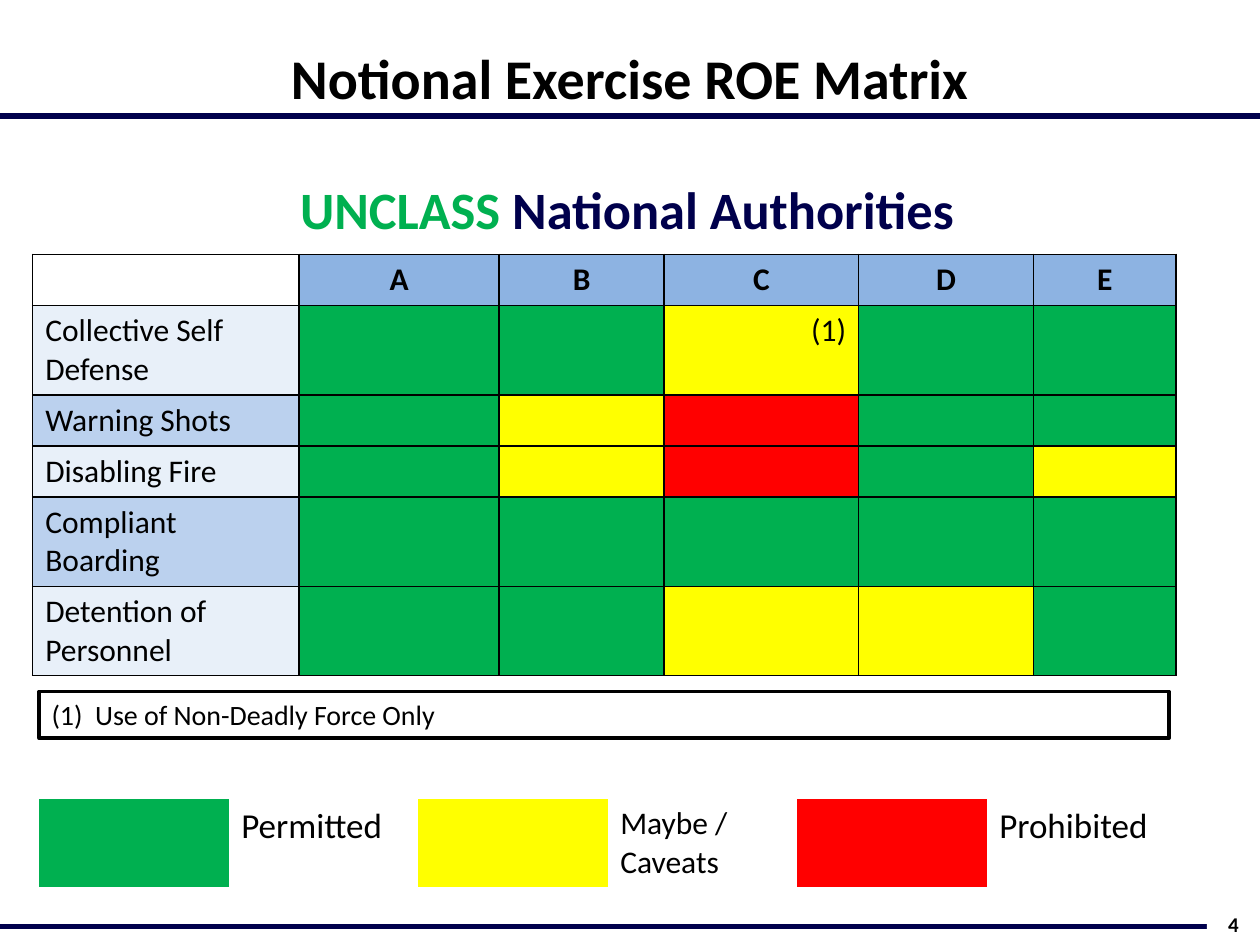
from lxml import etree
from pptx import Presentation
from pptx.dml.color import RGBColor
from pptx.enum.shapes import MSO_CONNECTOR, MSO_SHAPE
from pptx.enum.text import MSO_ANCHOR, PP_ALIGN
from pptx.oxml.ns import qn
from pptx.util import Cm, Pt

LEFT, MID, RIGHT = PP_ALIGN.LEFT, PP_ALIGN.CENTER, PP_ALIGN.RIGHT
TOP, CENTER, LOW = MSO_ANCHOR.TOP, MSO_ANCHOR.MIDDLE, MSO_ANCHOR.BOTTOM
BLACK = RGBColor(0x00, 0x00, 0x00)
WHITE = RGBColor(0xFF, 0xFF, 0xFF)
NAVY = RGBColor(0x00, 0x00, 0x4C)
GREEN = RGBColor(0x00, 0xB0, 0x50)
YELLOW = RGBColor(0xFF, 0xFF, 0x00)
RED = RGBColor(0xFF, 0x00, 0x00)
HEAD = RGBColor(0x8D, 0xB3, 0xE2)
BANDS = RGBColor(0xE8, 0xF0, 0xF9), RGBColor(0xBB, 0xD1, 0xEE)
STATES = {"G": GREEN, "Y": YELLOW, "R": RED}

TITLE = "Notional Exercise ROE Matrix"
NATIONS = "ABCDE"
RULES = [  # action, state for each nation, row height in cm
    ("Collective Self Defense", "GGYGG", 1.8),
    ("Warning Shots", "GYRGG", 1.03),
    ("Disabling Fire", "GYRGY", 1.03),
    ("Compliant Boarding", "GGGGG", 1.8),
    ("Detention of Personnel", "GGYYG", 1.8),
]
MARKS = {(1, 3): "(1)"}
NOTE = "(1)  Use of Non-Deadly Force Only"
LEGEND = [
    (GREEN, ["Permitted"], 20),
    (YELLOW, ["Maybe /", "Caveats"], 18),
    (RED, ["Prohibited"], 20),
]
WIDTHS = [5.37, 4.03, 3.33, 3.92, 3.52, 2.88]
HEADROW = 1.03
WIDE, HIGH = 25.4, 19.05


def write(frame, lines, size, align=LEFT, bold=False):
    """Fill a frame; each line is a list of (text, colour) runs."""
    look = {"name": "Calibri", "size": Pt(size), "bold": bold}
    for i, line in enumerate(lines):
        para = frame.add_paragraph() if i else frame.paragraphs[0]
        para.alignment = align
        for text, color in line:
            run = para.add_run()
            run.text = text
            for key, value in look.items():
                setattr(run.font, key, value)
            run.font.color.rgb = color


def add_rule(slide, y):
    line = slide.shapes.add_connector(
        MSO_CONNECTOR.STRAIGHT, 0, Cm(y), Cm(WIDE), Cm(y))
    line.line.color.rgb = NAVY
    line.line.width = Pt(3)
    etree.SubElement(line._element.spPr, qn("a:effectLst"))


def add_text(slide, box, lines, size, anchor=TOP, **look):
    shape = slide.shapes.add_textbox(*map(Cm, box))
    shape.text_frame.word_wrap = True
    shape.text_frame.vertical_anchor = anchor
    write(shape.text_frame, lines, size, **look)


def add_box(slide, box, text, size, anchor=TOP, edge=None, **look):
    shape = slide.shapes.add_shape(MSO_SHAPE.RECTANGLE, *map(Cm, box))
    shape.shadow.inherit = False
    shape.fill.solid()
    shape.fill.fore_color.rgb = WHITE
    if edge:
        shape.line.color.rgb = edge
        shape.line.width = Pt(2)
    else:
        shape.line.fill.background()
    shape.text_frame.word_wrap = True
    shape.text_frame.vertical_anchor = anchor
    write(shape.text_frame, [[(text, BLACK)]], size, **look)


def add_grid(slide, left, top, widths, heights):
    box = map(Cm, (left, top, sum(widths), sum(heights)))
    table = slide.shapes.add_table(len(heights), len(widths), *box).table
    table.first_row = table.horz_banding = False
    for col, width in zip(table.columns, widths):
        col.width = Cm(width)
    for row, height in zip(table.rows, heights):
        row.height = Cm(height)
    return table


def style(cell, color=None, edge=None):
    """Set the four borders and the fill; None leaves either one clear."""
    props = cell._tc.get_or_add_tcPr()
    for side in ("lnL", "lnR", "lnT", "lnB"):
        line = etree.SubElement(props, qn("a:" + side), w=str(Pt(1)))
        if edge:
            fill = etree.SubElement(line, qn("a:solidFill"))
            etree.SubElement(fill, qn("a:srgbClr"), val=str(edge))
        else:
            etree.SubElement(line, qn("a:noFill"))
    if color:
        cell.fill.solid()
        cell.fill.fore_color.rgb = color
    else:
        cell.fill.background()


def add_matrix(slide):
    heights = [HEADROW] + [rule[2] for rule in RULES]
    table = add_grid(slide, 0.66, 5.13, WIDTHS, heights)
    style(table.cell(0, 0), edge=BLACK)
    for c, nation in enumerate(NATIONS, 1):
        cell = table.cell(0, c)
        style(cell, HEAD, BLACK)
        write(cell.text_frame, [[(nation, BLACK)]], 18, MID, True)
    for r, (action, states, _) in enumerate(RULES, 1):
        cell = table.cell(r, 0)
        style(cell, BANDS[(r - 1) % 2], BLACK)
        write(cell.text_frame, [[(action, BLACK)]], 18)
        for c, state in enumerate(states, 1):
            style(table.cell(r, c), STATES[state], BLACK)
    for (r, c), mark in MARKS.items():
        write(table.cell(r, c).text_frame, [[(mark, BLACK)]], 18, RIGHT)


def add_legend(slide):
    table = add_grid(slide, 0.79, 16.1, [3.82] * 2 * len(LEGEND), [1.78])
    for i, (color, lines, size) in enumerate(LEGEND):
        swatch, label = table.cell(0, 2 * i), table.cell(0, 2 * i + 1)
        style(swatch, color)
        style(label)
        write(label.text_frame, [[(line, BLACK)] for line in lines], size)


def main():
    deck = Presentation()
    deck.slide_width, deck.slide_height = Cm(WIDE), Cm(HIGH)
    slide = deck.slides.add_slide(deck.slide_layouts[6])
    for y in (18.67, 2.34):
        add_rule(slide, y)
    add_text(slide, (0, 0, WIDE, 2.36), [[(TITLE, BLACK)]], 32, LOW,
             align=MID, bold=True)
    add_box(slide, (24.33, 18.21, 1.07, 0.84), "4", 12, CENTER,
            align=MID, bold=True)
    add_matrix(slide)
    add_box(slide, (0.79, 13.94, 22.78, 0.94), NOTE, 16, edge=BLACK)
    heading = [("UNCLASS", GREEN), (" National Authorities", NAVY)]
    add_text(slide, (-0.03, 3.45, 25.35, 7.19), [heading], 30,
             align=MID, bold=True)
    add_legend(slide)
    deck.save("out.pptx")


if __name__ == "__main__":
    main()
